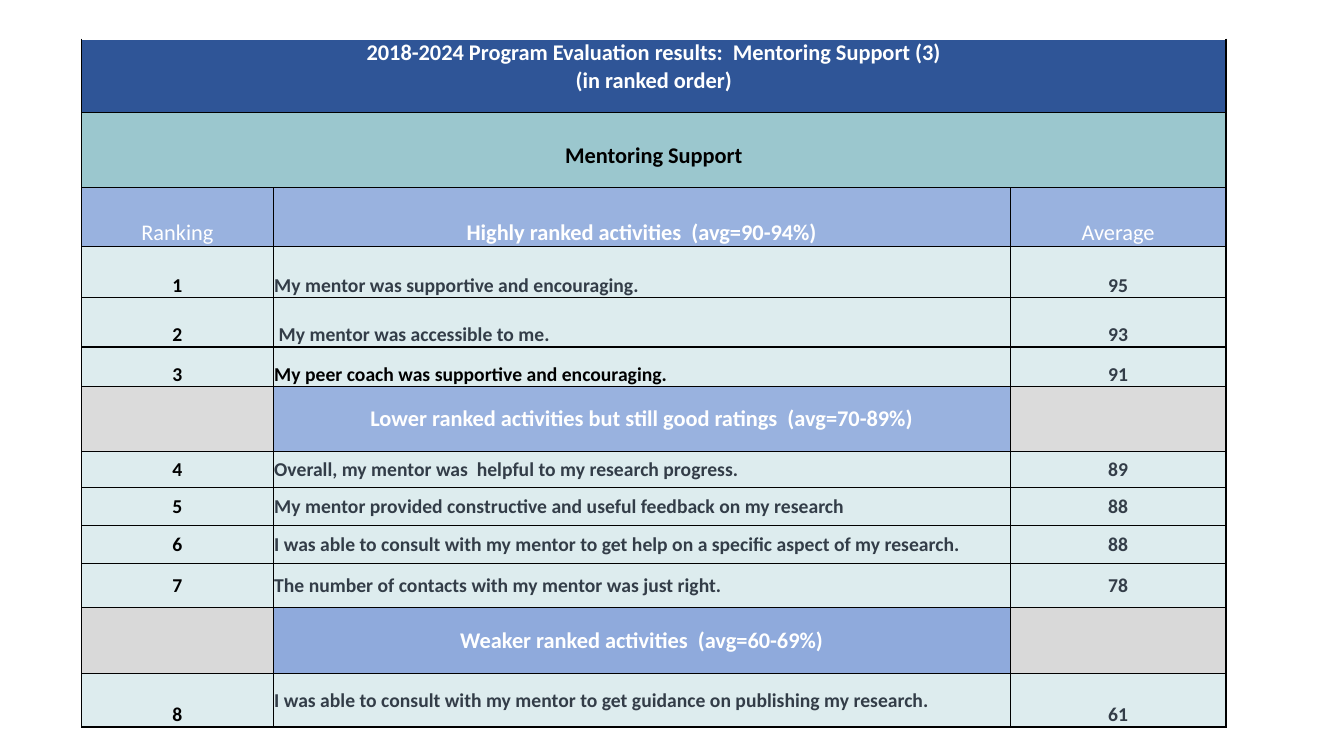
import pptx
import pptx.dml.color
import pptx.enum.text
import pptx.oxml
import pptx.oxml.ns
import pptx.util
from lxml import etree

Inches = pptx.util.Inches
RGBColor = pptx.dml.color.RGBColor
ALIGN = pptx.enum.text.PP_ALIGN
ANCHOR = pptx.enum.text.MSO_ANCHOR

WHITE = RGBColor(0xFF, 0xFF, 0xFF)
BLACK = RGBColor(0, 0, 0)
SLATE = RGBColor(0x33, 0x3D, 0x48)
NAVY = RGBColor(0x2F, 0x55, 0x97)
TEAL = RGBColor(0x9B, 0xC7, 0xCE)
BLUE = RGBColor(0x8F, 0xAA, 0xDC)
PALE = RGBColor(0xDD, 0xEC, 0xEE)
GRAY = RGBColor(0xA6, 0xA6, 0xA6)
LIGHT_GRAY = RGBColor(0xD9, 0xD9, 0xD9)

# Each row: kind, height in inches, texts
ROWS = [
    ("title", 0.72, ["2018-2024 Program Evaluation results:  Mentoring Support (3)\n(in ranked order)"]),
    ("subtitle", 0.75, ["Mentoring Support"]),
    ("header", 0.58, ["Ranking", "Highly ranked activities  (avg=90-94%)", "Average"]),
    ("high", 0.51, ["1", "My mentor was supportive and encouraging.", "95"]),
    ("high", 0.49, ["2", " My mentor was accessible to me.", "93"]),
    ("peer", 0.39, ["3", "My peer coach was supportive and encouraging.", "91"]),
    ("lower", 0.65, ["", "Lower ranked activities but still good ratings  (avg=70-89%)", ""]),
    ("middle", 0.35, ["4", "Overall, my mentor was  helpful to my research progress.", "89"]),
    ("middle", 0.38, ["5", "My mentor provided constructive and useful feedback on my research", "88"]),
    ("middle", 0.38, ["6", "I was able to consult with my mentor to get help on a specific aspect of my research.", "88"]),
    ("middle", 0.43, ["7", "The number of contacts with my mentor was just right.", "78"]),
    ("weaker", 0.66, ["", "Weaker ranked activities  (avg=60-69%)", ""]),
    ("last", 0.53, ["8", "I was able to consult with my mentor to get guidance on publishing my research.", "61"]),
]
COLUMN_WIDTHS = [1.9, 7.31, 2.14]
LEFT, TOP = 0.81, 0.39

# Band kinds: (fill, opacity %) of the middle cell and of the side cells, text colour, anchor
BANDS = {
    "title": ((NAVY, 100), (NAVY, 100), WHITE, ANCHOR.BOTTOM),
    "subtitle": ((TEAL, 100), (TEAL, 100), BLACK, ANCHOR.BOTTOM),
    "header": ((BLUE, 90), (BLUE, 90), WHITE, ANCHOR.BOTTOM),
    "lower": ((BLUE, 90), (GRAY, 40), WHITE, ANCHOR.MIDDLE),
    "weaker": ((BLUE, 100), (LIGHT_GRAY, 100), WHITE, ANCHOR.MIDDLE),
}
SPANNING = ("title", "subtitle")


def set_borders(cell, top_color):
    properties = cell._tc.get_or_add_tcPr()
    for index, side in enumerate(("L", "R", "T", "B")):
        color = top_color if side == "T" else BLACK
        line = pptx.oxml.parse_xml(
            f'<a:ln{side} {pptx.oxml.ns.nsdecls("a")} w="12700"><a:solidFill>'
            f'<a:srgbClr val="{color}"/></a:solidFill></a:ln{side}>')
        properties.insert(index, line)


def set_fill(cell, color, opacity):
    cell.fill.solid()
    cell.fill.fore_color.rgb = color
    if opacity < 100:
        swatch = cell._tc.tcPr.find(".//" + pptx.oxml.ns.qn("a:srgbClr"))
        etree.SubElement(swatch, pptx.oxml.ns.qn("a:alpha"), val=str(opacity * 1000))


def write_text(cell, text, size, color, bold, align):
    cell.text_frame.text = text
    for para in cell.text_frame.paragraphs:
        para.alignment = align
        for span in para.runs:
            span.font.name = "Calibri"
            span.font.size = pptx.util.Pt(size)
            span.font.bold = bold
            span.font.color.rgb = color


def format_band(cell, kind, column, text):
    middle_fill, side_fill, color, anchor = BANDS[kind]
    set_fill(cell, *(middle_fill if column == 1 else side_fill))
    cell.vertical_anchor = anchor
    if kind in SPANNING:
        cell.margin_bottom = Inches(0.18)
    bold = kind != "header" or column == 1
    write_text(cell, text, 16, color, bold, ALIGN.CENTER)


def format_rating(cell, kind, column, text):
    set_fill(cell, PALE, 100)
    centered = kind == "middle" or (kind == "last" and column == 1)
    cell.vertical_anchor = ANCHOR.MIDDLE if centered else ANCHOR.BOTTOM
    cell.margin_left = cell.margin_right = cell.margin_top = Inches(0.01)
    black = column == 0 or (kind == "peer" and column == 1)
    align = ALIGN.LEFT if column == 1 else ALIGN.CENTER
    write_text(cell, text, 14, BLACK if black else SLATE, True, align)


deck = pptx.Presentation()
deck.slide_width, deck.slide_height = Inches(13.33), Inches(7.5)
page = deck.slides.add_slide(deck.slide_layouts[6])
table = page.shapes.add_table(
    len(ROWS), len(COLUMN_WIDTHS), Inches(LEFT), Inches(TOP),
    Inches(sum(COLUMN_WIDTHS)), Inches(sum(height for _, height, _ in ROWS))).table
for column, width in zip(table.columns, COLUMN_WIDTHS):
    column.width = Inches(width)

for row_index, (kind, height, texts) in enumerate(ROWS):
    table.rows[row_index].height = Inches(height)
    if kind in SPANNING:
        table.cell(row_index, 0).merge(table.cell(row_index, len(COLUMN_WIDTHS) - 1))
    for column_index in range(len(COLUMN_WIDTHS)):
        cell = table.cell(row_index, column_index)
        cell.margin_left = cell.margin_right = cell.margin_top = cell.margin_bottom = 0
        text = texts[column_index] if column_index < len(texts) else ""
        format_cell = format_band if kind in BANDS else format_rating
        format_cell(cell, kind, column_index, text)
        set_borders(cell, WHITE if kind == "title" else BLACK)

deck.save("out.pptx")
